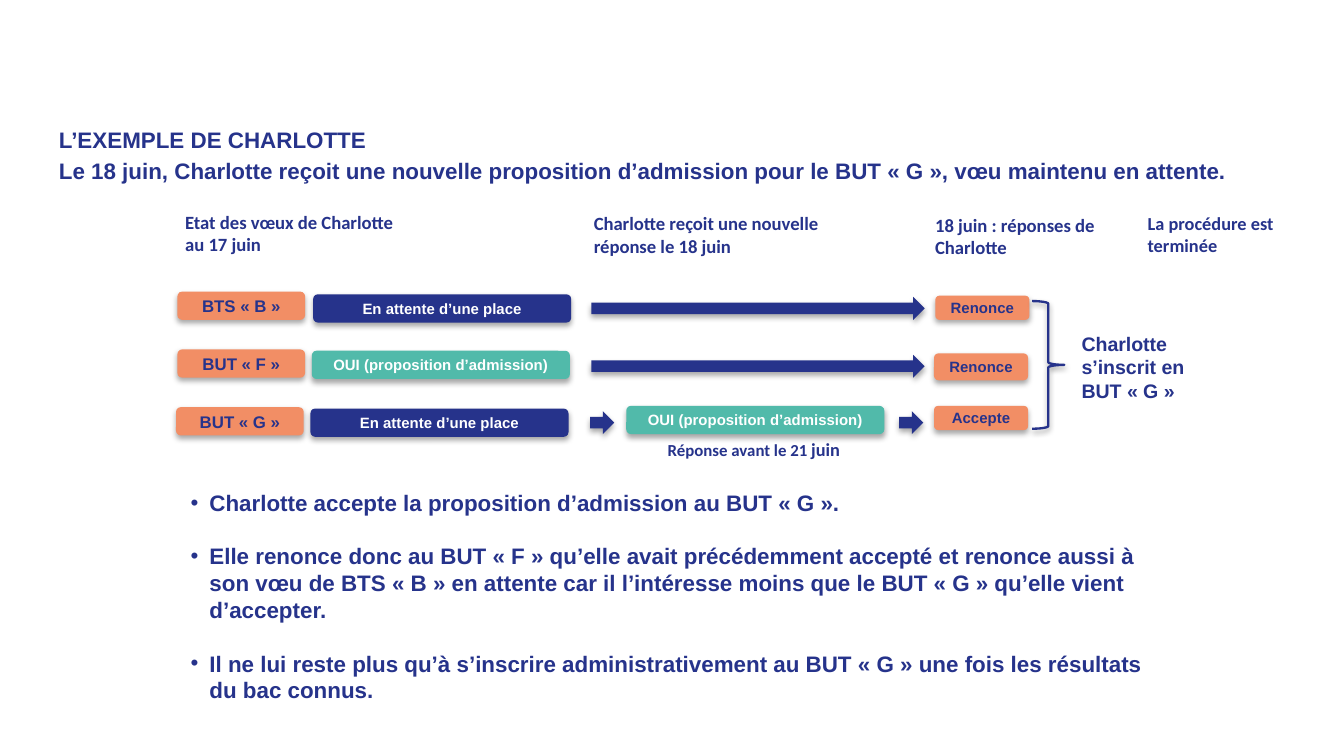
from lxml import etree
from pptx import Presentation
from pptx import util as u
from pptx.dml.color import RGBColor
from pptx.enum import shapes, text
from pptx.oxml.ns import qn

NAVY, ORANGE, TEAL, WHITE = "26338B", "F28E65", "51BAAA", "FFFFFF"
PILL = shapes.MSO_SHAPE.ROUNDED_RECTANGLE
ARROW = shapes.MSO_SHAPE.RIGHT_ARROW
BRACE = shapes.MSO_SHAPE.RIGHT_BRACE


def color(value):
    """Turn a hex string into a colour."""
    return RGBColor.from_string(value)


def set_font(font, size, name="Arial", value=NAVY):
    """Apply the bold type used all over the slide."""
    font.size, font.name, font.bold = u.Pt(size), name, True
    font.color.rgb = color(value)


def add_shadow(shape, opacity=35, distance=1.8):
    """Give a shape its soft downward shadow."""
    effects = etree.SubElement(shape._element.spPr, qn("a:effectLst"))
    outer = etree.SubElement(effects, qn("a:outerShdw"), blurRad=str(u.Pt(3.1)),
                             dist=str(u.Pt(distance)), dir="5400000", rotWithShape="0")
    black = etree.SubElement(outer, qn("a:srgbClr"), val="000000")
    etree.SubElement(black, qn("a:alpha"), val=str(opacity * 1000))


def add_block(slide, kind, box, fill):
    """Add a filled shape without outline."""
    shape = slide.shapes.add_shape(kind, *map(u.Inches, box))
    shape.fill.solid()
    shape.fill.fore_color.rgb = color(fill)
    shape.line.fill.background()
    add_shadow(shape)
    return shape


def add_pill(slide, box, label, fill, size=8, value=NAVY):
    """Add a rounded label with centred text."""
    frame = add_block(slide, PILL, box, fill).text_frame
    frame.word_wrap = True
    frame.vertical_anchor = text.MSO_ANCHOR.MIDDLE
    paragraph = frame.paragraphs[0]
    paragraph.text = label
    paragraph.alignment = text.PP_ALIGN.CENTER
    set_font(paragraph.font, size, value=value)


def add_text(slide, box, lines, size, name="Arial"):
    """Add a wrapped text box and return its paragraphs."""
    frame = slide.shapes.add_textbox(*map(u.Inches, box)).text_frame
    frame.word_wrap = True
    for index, line in enumerate(lines):
        paragraph = frame.add_paragraph() if index else frame.paragraphs[0]
        paragraph.text = line
        set_font(paragraph.font, size, name)
    return frame.paragraphs


def add_title(slide, box):
    """Add the two title lines."""
    lines = ["L’EXEMPLE DE CHARLOTTE",
             "Le 18 juin, Charlotte reçoit une nouvelle proposition d’admission "
             "pour le BUT « G », vœu maintenu en attente."]
    add_text(slide, box, lines, 12)[1].space_before = u.Pt(2.4)


def add_headings(slide, left, top):
    """Add the four column headings."""
    headings = [(0, 0, 1.8, "Etat des vœux de Charlotte au 17 juin", 10),
                (3.04, 0.01, 2.24, "Charlotte reçoit une nouvelle réponse le 18 juin", 10),
                (5.58, 0.02, 1.86, "18 juin : réponses de Charlotte", 10),
                (7.16, 0.01, 1.42, "La procédure est terminée", 9.8)]
    for x, y, width, label, size in headings:
        add_text(slide, (left + x, top + y, width, 0.44), [label], size, "Calibri")


def add_wish(slide, left, top, wish, state, fill, nudge, answer, answer_box):
    """Add a wish, its state on 17 June and its final answer."""
    x, y, height = answer_box
    add_pill(slide, (left, top, 0.95, 0.21), wish, ORANGE, 9)
    add_pill(slide, (left + 1 + nudge, top + 0.01 + nudge, 1.92, 0.21), state, fill,
             value=WHITE)
    add_pill(slide, (left + x, top + y, 0.7, height), answer, ORANGE)


def add_wishes(slide, left, top):
    """Add the three wish rows and what happens to each on 18 June."""
    waiting, offer = "En attente d’une place", "OUI (proposition d’admission)"
    rows = [("BTS « B »", waiting, NAVY, 0.01, "Renonce", (5.64, 0.03, 0.18)),
            ("BUT « F »", offer, TEAL, 0, "Renonce", (5.63, 0.03, 0.2)),
            ("BUT « G »", waiting, NAVY, 0, "Accepte", (5.64, -0.01, 0.18))]
    step = 0.43
    for index, row in enumerate(rows):
        shift = -0.01 if index == 2 else 0
        add_wish(slide, left + shift, top + index * step, *row)
    for index in range(2):
        add_block(slide, ARROW, (left + 3.08, top + 0.04 + index * step, 2.48, 0.17), NAVY)
    last = top + 2 * step
    for x in (3.07, 5.37):
        add_block(slide, ARROW, (left + x, last + 0.03, 0.18, 0.17), NAVY)
    add_pill(slide, (left + 3.34, last - 0.01, 1.92, 0.21), offer, TEAL, value=WHITE)
    paragraph = add_text(slide, (left + 3.55, last + 0.18, 1.6, 0.27),
                         ["Réponse avant le 21 "], 9, "Calibri")[0]
    run = paragraph.add_run()
    run.text = "juin"
    run.font.size = u.Pt(9.8)


def add_outcome(slide, left, top):
    """Add the brace and the final outcome."""
    brace = slide.shapes.add_shape(BRACE, *map(u.Inches, (left, top, 0.24, 0.95)))
    brace.fill.background()
    brace.line.color.rgb = color(NAVY)
    brace.line.width = u.Pt(1.25)
    add_shadow(brace, 38, 1.6)
    add_text(slide, (left + 0.27, top + 0.18, 1, 0.63),
             ["Charlotte s’inscrit en BUT « G »"], 10.5)


def add_conclusions(slide, box):
    """Add the bulleted conclusions."""
    lines = ["Charlotte accepte la proposition d’admission au BUT « G ».",
             "Elle renonce donc au BUT « F » qu’elle avait précédemment accepté et renonce "
             "aussi à son vœu de BTS « B » en attente car il l’intéresse moins que le "
             "BUT « G » qu’elle vient d’accepter.",
             "Il ne lui reste plus qu’à s’inscrire administrativement au BUT « G » "
             "une fois les résultats du bac connus."]
    frame = slide.shapes.add_textbox(*map(u.Inches, box)).text_frame
    frame.word_wrap = True
    for index, line in enumerate(lines):
        paragraph = frame.add_paragraph() if index else frame.paragraphs[0]
        paragraph.text = line
        if index:
            paragraph.space_before = u.Pt(14.2)
        properties = paragraph._p.get_or_add_pPr()
        properties.set("marL", str(u.Inches(0.14)))
        properties.set("indent", str(u.Inches(-0.14)))
        bullet_color = etree.SubElement(properties, qn("a:buClr"))
        etree.SubElement(bullet_color, qn("a:srgbClr"), val=NAVY)
        etree.SubElement(properties, qn("a:buFont"), typeface="Arial")
        etree.SubElement(properties, qn("a:buChar"), char="•")
        set_font(paragraph.font, 12)


def main():
    """Build and save the slide."""
    presentation = Presentation()
    presentation.slide_width = u.Inches(10)
    presentation.slide_height = presentation.slide_width * 9 // 16
    slide = presentation.slides.add_slide(presentation.slide_layouts[6])
    add_title(slide, (0.34, 0.89, 9.06, 0.7))
    add_headings(slide, 1.28, 1.52)
    add_wishes(slide, 1.32, 2.17)
    add_outcome(slide, 7.68, 2.24)
    add_conclusions(slide, (1.32, 3.59, 7.4, 1.72))
    presentation.save("out.pptx")


if __name__ == "__main__":
    main()
